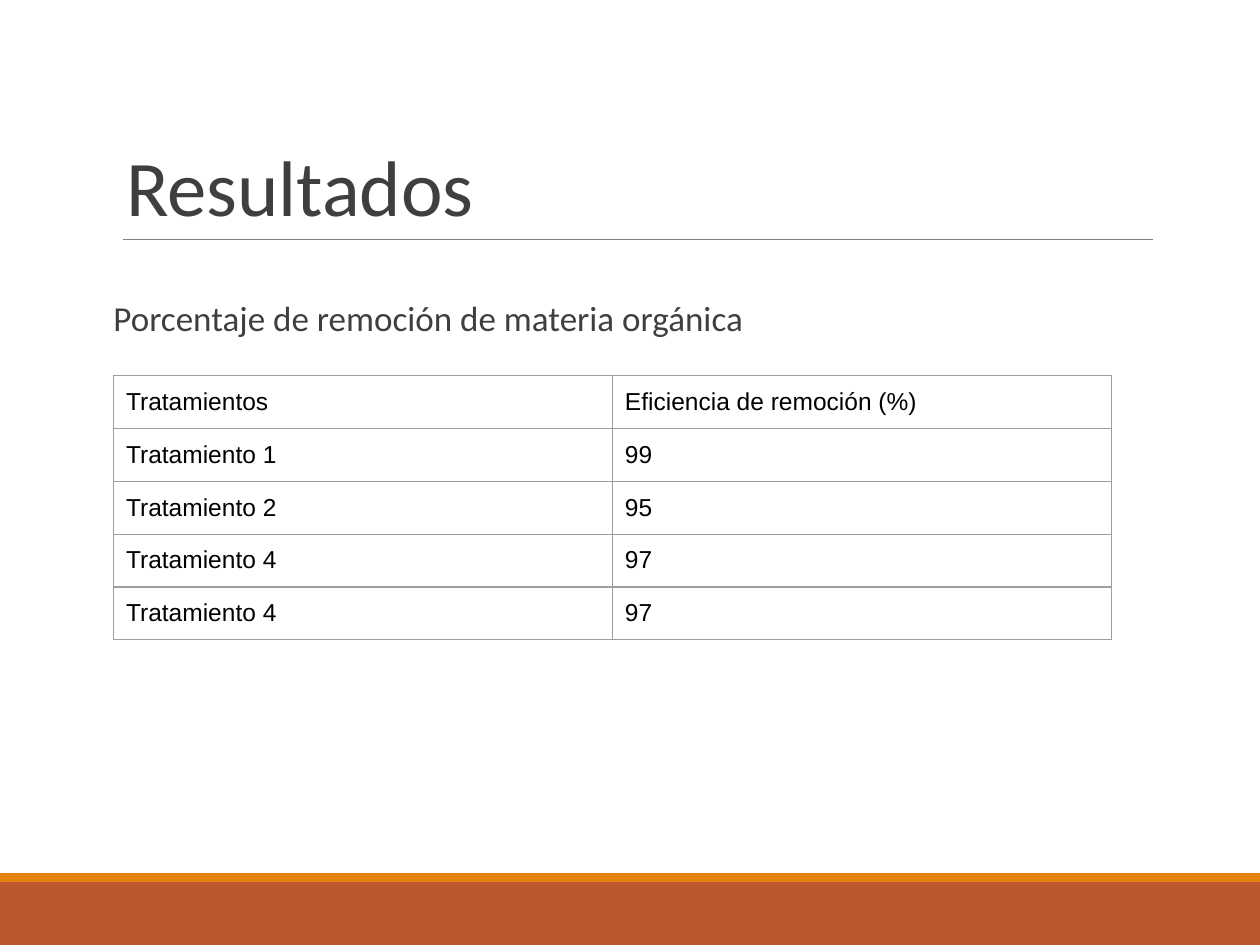
from lxml import etree
from pptx import Presentation
from pptx import util as u
from pptx.dml.color import RGBColor
from pptx.enum import shapes, text
from pptx.oxml import ns

IN = u.Inches


def color(hex_value):
    return RGBColor.from_string(hex_value)


class SlideBuilder:
    HEADING_FONT, TABLE_FONT = "Calibri", "Arial"
    DARK, BLACK, RULE, BORDER = "3F3F3F", "000000", "7F7F7F", "9E9E9E"

    def __init__(self, slide):
        self.slide = slide

    def add_run(self, paragraph, words, size, font, hex_value):
        run = paragraph.add_run()
        run.text = words
        run.font.size = u.Pt(size)
        run.font.name = font
        run.font.color.rgb = color(hex_value)

    def set_frame(self, frame, side_inset, anchor):
        frame.word_wrap = True
        frame.auto_size = text.MSO_AUTO_SIZE.NONE
        frame.vertical_anchor = anchor
        frame.margin_left = frame.margin_right = IN(side_inset)
        frame.margin_top = frame.margin_bottom = IN(0.05)
        paragraph = frame.paragraphs[0]
        paragraph.alignment = text.PP_ALIGN.LEFT
        return paragraph

    def band(self, top, height, hex_value):
        band = self.slide.shapes.add_shape(
            shapes.MSO_SHAPE.RECTANGLE, 0, IN(top), IN(10), IN(height))
        band.shadow.inherit = False
        band.fill.solid()
        band.fill.fore_color.rgb = color(hex_value)
        band.line.fill.background()

    def rule(self, left, right, y):
        rule = self.slide.shapes.add_connector(
            shapes.MSO_CONNECTOR.STRAIGHT, IN(left), IN(y), IN(right), IN(y))
        rule.line.color.rgb = color(self.RULE)
        rule.line.width = u.Pt(0.75)
        etree.SubElement(rule._element.spPr, ns.qn("a:effectLst"))

    def title(self, words, left, top, width, height):
        title = self.slide.shapes.title
        title.left, title.top = IN(left), IN(top)
        title.width, title.height = IN(width), IN(height)
        paragraph = self.set_frame(title.text_frame, 0.1, text.MSO_ANCHOR.BOTTOM)
        paragraph.line_spacing = 0.85
        self.add_run(paragraph, words, 45, self.HEADING_FONT, self.DARK)

    def body(self, words, left, top, width, height):
        body = self.slide.shapes.add_textbox(IN(left), IN(top), IN(width), IN(height))
        paragraph = self.set_frame(body.text_frame, 0, text.MSO_ANCHOR.TOP)
        paragraph.line_spacing = 0.9
        paragraph.space_before, paragraph.space_after = u.Pt(12), u.Pt(2)
        self.add_run(paragraph, words, 20, self.HEADING_FONT, self.DARK)

    def border(self, cell):
        properties = cell._tc.get_or_add_tcPr()
        for position, side in enumerate(("a:lnL", "a:lnR", "a:lnT", "a:lnB")):
            line = etree.Element(ns.qn(side), w=str(u.Pt(0.75)))
            fill = etree.SubElement(line, ns.qn("a:solidFill"))
            etree.SubElement(fill, ns.qn("a:srgbClr"), val=self.BORDER)
            properties.insert(position, line)

    def table(self, rows, left, top, column_width, row_height):
        columns = len(rows[0])
        table = self.slide.shapes.add_table(
            len(rows), columns, IN(left), IN(top),
            IN(column_width * columns), IN(row_height * len(rows))).table
        table.first_row = table.horz_banding = False
        for r, values in enumerate(rows):
            for c, value in enumerate(values):
                cell = table.cell(r, c)
                cell.fill.background()
                cell.margin_left = cell.margin_right = IN(0.1)
                cell.margin_top = cell.margin_bottom = IN(0.1)
                self.add_run(cell.text_frame.paragraphs[0], value, 14,
                             self.TABLE_FONT, self.BLACK)
                self.border(cell)


def main():
    deck = Presentation()
    deck.slide_width, deck.slide_height = IN(10), IN(7.5)
    page = SlideBuilder(deck.slides.add_slide(deck.slide_layouts[5]))

    # Footer bands and rule under the title
    page.band(7, 0.5, "BD582C")
    page.band(6.93, 0.07, "E48312")
    page.rule(0.98, 9.15, 1.9)

    # Title and subject
    page.title("Resultados", 0.9, 0.31, 8.25, 1.59)
    page.body("Porcentaje de remoción de materia orgánica", 0.9, 2.34, 8.25, 4.4)

    # Removal efficiency by treatment
    efficiencies = [
        ("Tratamientos", "Eficiencia de remoción (%)"),
        ("Tratamiento 1", "99"),
        ("Tratamiento 2", "95"),
        ("Tratamiento 4", "97"),
        ("Tratamiento 4", "97"),
    ]
    page.table(efficiencies, 0.9, 2.98, 3.96, 0.42)

    deck.save("out.pptx")


if __name__ == "__main__":
    main()
